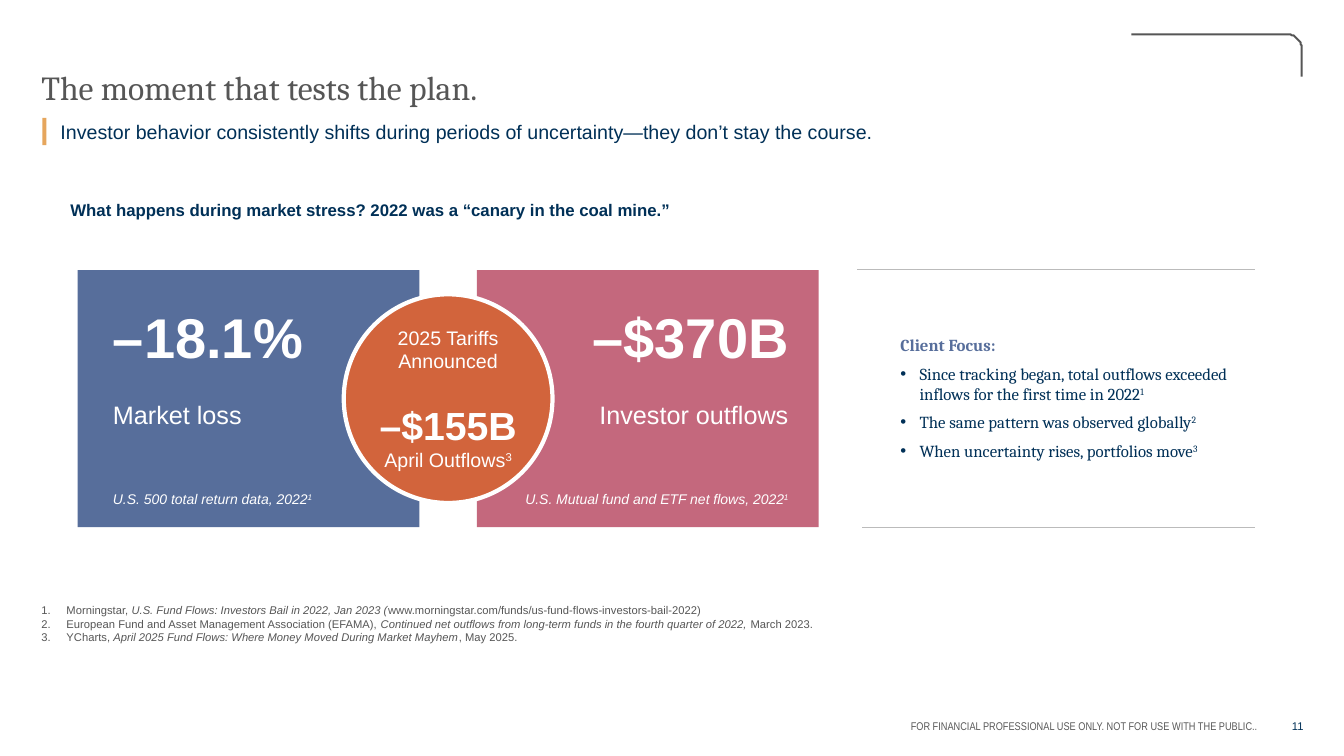
"""Build the slide on how investors behaved during market stress."""
from math import cos, radians, sin

from lxml.etree import SubElement
from pptx import Presentation
from pptx.dml.color import RGBColor
from pptx.enum.shapes import MSO_CONNECTOR, MSO_SHAPE
from pptx.enum.text import MSO_ANCHOR, MSO_AUTO_SIZE, PP_ALIGN
from pptx.oxml.ns import qn
from pptx.util import Pt

PX = 9144
NAVY, GRAY, WHITE, BLUE = "003057", "565656", "FFFFFF", "576E9B"
LEFT, CENTER, RIGHT = PP_ALIGN.LEFT, PP_ALIGN.CENTER, PP_ALIGN.RIGHT
color_of = RGBColor.from_string


def set_frame(box, insets=(10, 5, 10, 5), anchor=MSO_ANCHOR.TOP, wrap=True):
    """Set the margins, anchor and wrapping of a box and return its text frame."""
    frame = box.text_frame
    frame.auto_size = MSO_AUTO_SIZE.NONE
    frame.word_wrap = wrap
    frame.vertical_anchor = anchor
    frame.margin_left, frame.margin_top, frame.margin_right, frame.margin_bottom = (
        inset * PX for inset in insets)
    return frame


def add_para(frame, spans, size, color, font="Arial", align=LEFT, before=0, after=0,
             line=1.0, bold=False, margin=0, hanging=0, bullet="buNone", **bullet_settings):
    """Add a paragraph of (text, style) spans, where style is '', 'italic' or holds 'super'."""
    para = frame.paragraphs[0]
    if para.runs:
        para = frame.add_paragraph()
    properties = para._p.get_or_add_pPr()
    properties.set("marL", str(margin * PX))
    properties.set("indent", str(-hanging * PX))
    SubElement(properties, qn("a:" + bullet), bullet_settings)
    para.alignment = align
    para.line_spacing = line
    para.space_before, para.space_after = Pt(before), Pt(after)
    for text, style in spans:
        span = para.add_run()
        span.text = text
        span.font.name, span.font.size = font, Pt(size)
        span.font.bold, span.font.italic = bold, "italic" in style
        span.font.color.rgb = color_of(color)
        if "super" in style:
            span._r.get_or_add_rPr().set("baseline", "30000")


deck = Presentation()
deck.slide_width, deck.slide_height = 1333 * PX, 750 * PX
page = deck.slides.add_slide(deck.slide_layouts[3])
shapes = page.shapes

title, subtitle, focus = page.placeholders
for box, (left, top, width, height) in (
    (title, (41, 44, 1203, 63)),
    (subtitle, (60, 122, 1203, 26)),
    (focus, (883, 327, 362, 136)),
):
    box.left, box.top, box.width, box.height = left * PX, top * PX, width * PX, height * PX

add_para(set_frame(title, (0, 0, 0, 0), MSO_ANCHOR.BOTTOM),
         [("The moment that tests the plan.", "")], 24, GRAY, "Cambria", line=0.9)
add_para(set_frame(subtitle, (0, 0, 10, 5)),
         [("Investor behavior consistently shifts during periods of uncertainty"
           "—they don’t stay the course.", "")], 14, NAVY, line=0.9)

focus_frame = set_frame(focus)
add_para(focus_frame, [("Client Focus:", "")], 12, BLUE, "Cambria", after=3, bold=True)
for text, note in (
    ("Since tracking began, total outflows exceeded inflows for the first time in 2022", "1"),
    ("The same pattern was observed globally", "2"),
    ("When uncertainty rises, portfolios move", "3"),
):
    add_para(focus_frame, [(text, ""), (note, "super")], 12, NAVY, "Cambria", before=3, after=3,
             margin=19, hanging=19, bullet="buChar", char="•")

corner_x, corner_y, radius = 1277, 48, 14
arc = [(corner_x + radius * sin(radians(angle)), corner_y - radius * cos(radians(angle)))
       for angle in range(0, 91, 6)]
builder = shapes.build_freeform(1122, 34, scale=PX)
builder.add_line_segments(arc + [(corner_x + radius, 76)], close=False)
bracket = builder.convert_to_shape()
bracket.shadow.inherit = False
bracket.fill.background()
bracket.line.color.rgb = color_of(GRAY)
bracket.line.width = Pt(1.38)

accent = shapes.add_shape(MSO_SHAPE.RECTANGLE, 42 * PX, 117 * PX, 4 * PX, 27 * PX)
accent.shadow.inherit = False
accent.fill.solid()
accent.fill.fore_color.rgb = color_of("E6A65D")
accent.line.fill.background()

for left, top, width, height, insets, text, size, color, font, align, bold in (
    (60, 193, 804, 30, (10, 5, 10, 5),
     "What happens during market stress? 2022 was a “canary in the coal mine.”",
     12, NAVY, "Arial", LEFT, True),
    (577, 714, 671, 13, (0, 0, 0, 0),
     "FOR FINANCIAL PROFESSIONAL USE ONLY. NOT FOR USE WITH THE PUBLIC..",
     8, "595959", "Arial Narrow", RIGHT, False),
    (1223, 714, 70, 13, (0, 0, 0, 0), "11", 8, NAVY, "Arial", RIGHT, False),
):
    box = shapes.add_textbox(left * PX, top * PX, width * PX, height * PX)
    add_para(set_frame(box, insets), [(text, "")], size, color, font, align, bold=bold)

for left, fill, insets, align, figure, label, source in (
    (77, BLUE, (35, 32, 10, 5), LEFT, "–18.1%", "Market loss",
     "U.S. 500 total return data, 2022"),
    (473, "C4687D", (10, 32, 30, 5), RIGHT, "–$370B", "Investor outflows",
     "U.S. Mutual fund and ETF net flows, 2022"),
):
    card = shapes.add_shape(MSO_SHAPE.RECTANGLE, left * PX, 268 * PX, 339 * PX, 255 * PX)
    card.shadow.inherit = False
    card.fill.solid()
    card.fill.fore_color.rgb = color_of(fill)
    card.line.fill.background()
    frame = set_frame(card, insets)
    add_para(frame, [(figure, "")], 40, WHITE, align=align, bold=True)
    add_para(frame, [(label, "")], 18, WHITE, align=align, before=21)
    add_para(frame, [(source, "italic"), ("1", "italic super")], 10, WHITE, align=align, before=44)

for left, top in ((850, 267), (855, 523)):
    rule = shapes.add_connector(MSO_CONNECTOR.STRAIGHT, left * PX, top * PX, 1245 * PX, top * PX)
    rule.line.color.rgb = color_of("BBBBBB")
    rule.line.width = Pt(0.75)
    SubElement(rule._element.spPr, qn("a:effectLst"))

footnotes = shapes.add_textbox(41 * PX, 594 * PX, 813 * PX, 50 * PX)
footnote_frame = set_frame(footnotes, (0, 5, 10, 5))
for author, work, ending in (
    ("Morningstar, ", "U.S. Fund Flows: Investors Bail in 2022, Jan 2023 (",
     "www.morningstar.com/funds/us-fund-flows-investors-bail-2022)"),
    ("European Fund and Asset Management Association (EFAMA), ",
     "Continued net outflows from long-term funds in the fourth quarter of 2022, ",
     "March 2023."),
    ("YCharts, ", "April 2025 Fund Flows: Where Money Moved During Market Mayhem", ", May 2025."),
):
    add_para(footnote_frame, [(author, ""), (work, "italic"), (ending, "")], 8, GRAY,
             margin=25, hanging=25, bullet="buAutoNum", type="arabicPeriod")

circle = shapes.add_shape(MSO_SHAPE.OVAL, 341 * PX, 292 * PX, 207 * PX, 207 * PX)
circle.shadow.inherit = False
circle.fill.solid()
circle.fill.fore_color.rgb = color_of("D2643C")
circle.line.color.rgb = color_of(WHITE)
circle.line.width = Pt(3)
circle_frame = set_frame(circle, anchor=MSO_ANCHOR.MIDDLE, wrap=False)
for spans, size, before, bold in (
    ([("2025 Tariffs", "")], 14, 0, False),
    ([("Announced", "")], 14, 0, False),
    ([("–$155B", "")], 28, 20, True),
    ([("April Outflows", ""), ("3", "super")], 14, 0, False),
):
    add_para(circle_frame, spans, size, WHITE, align=CENTER, before=before, bold=bold)

deck.save("out.pptx")
